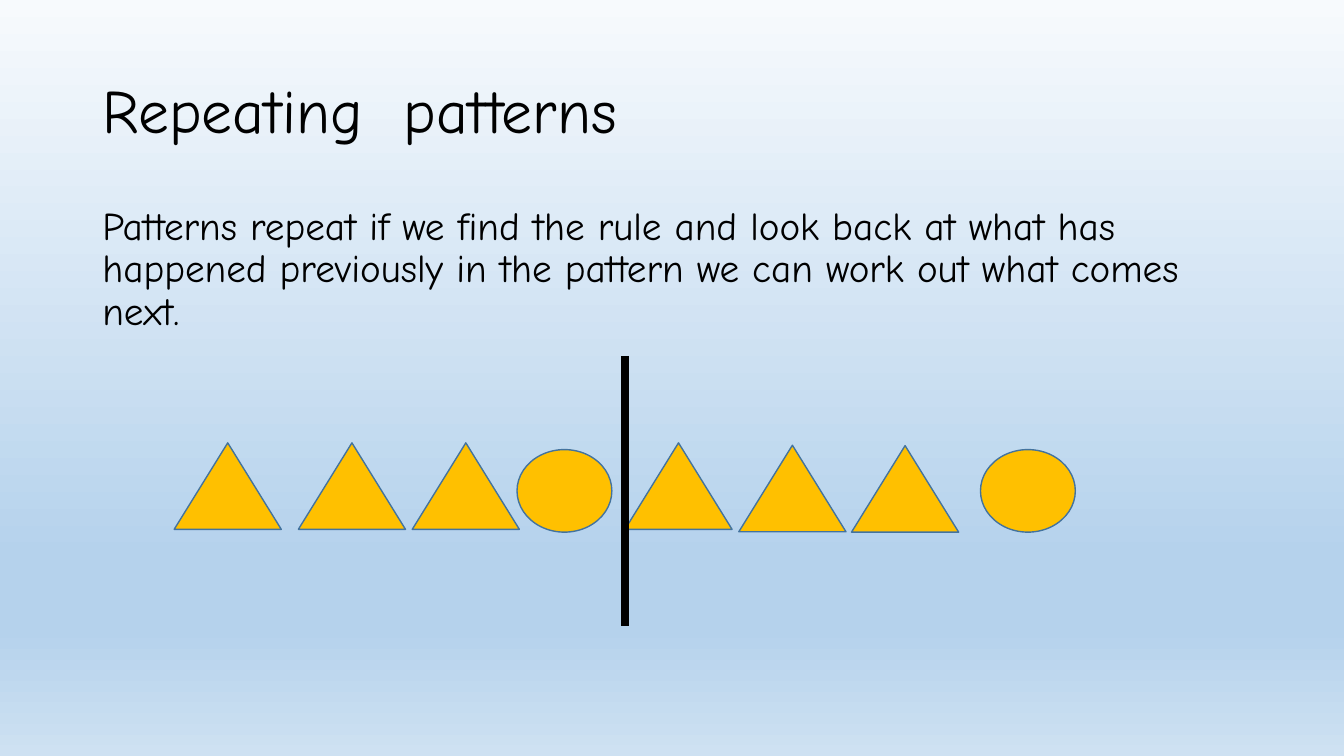
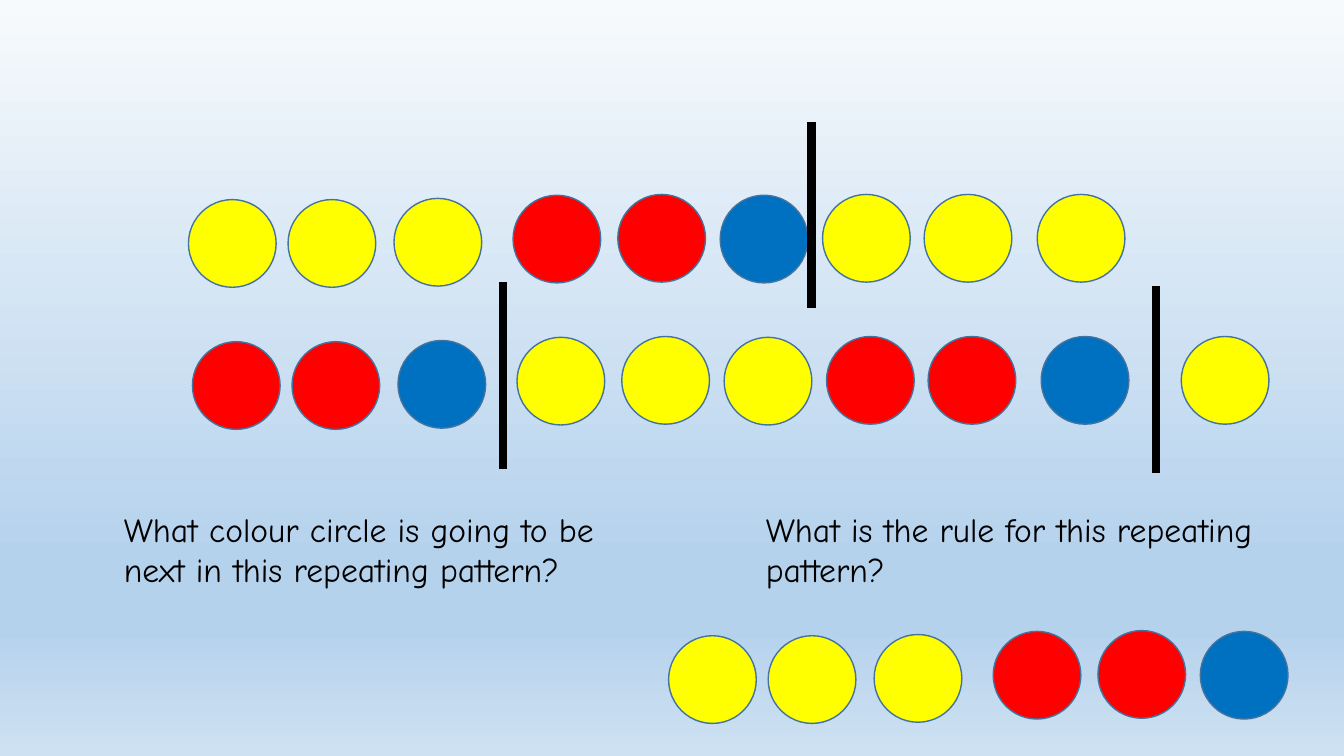
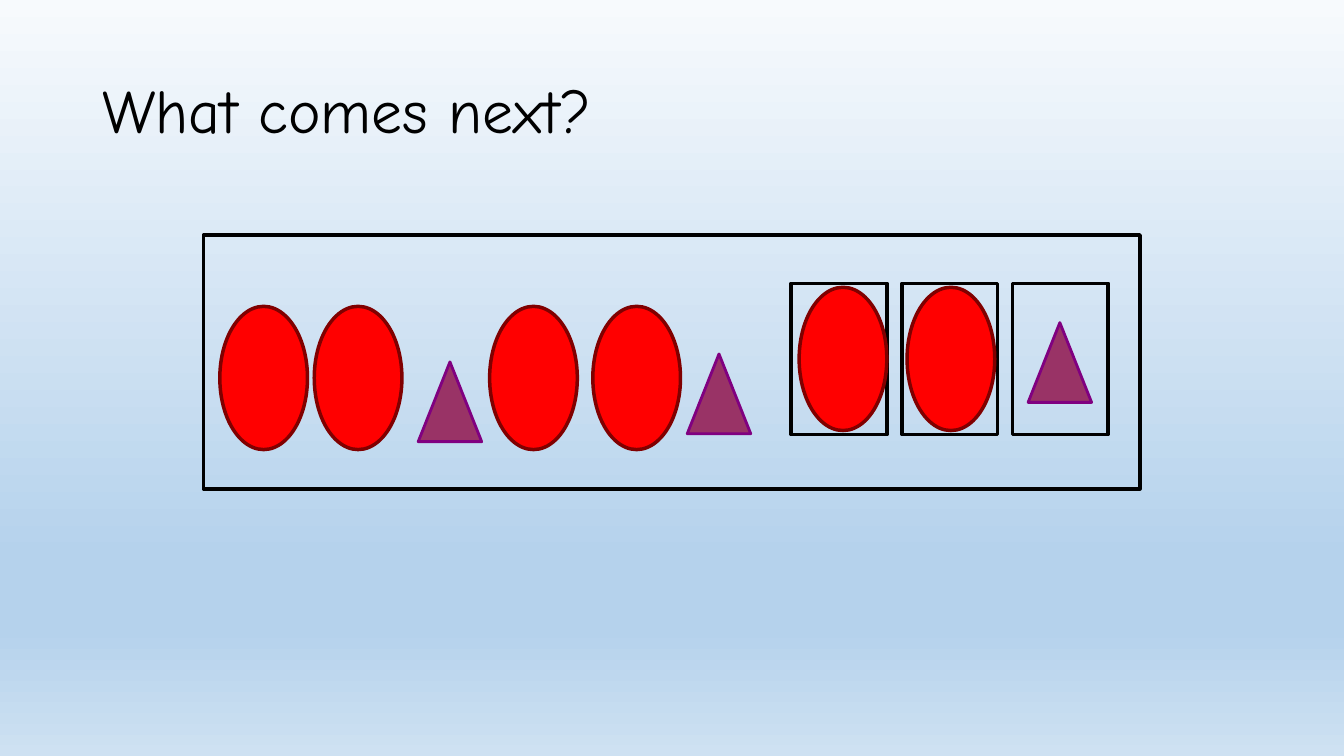
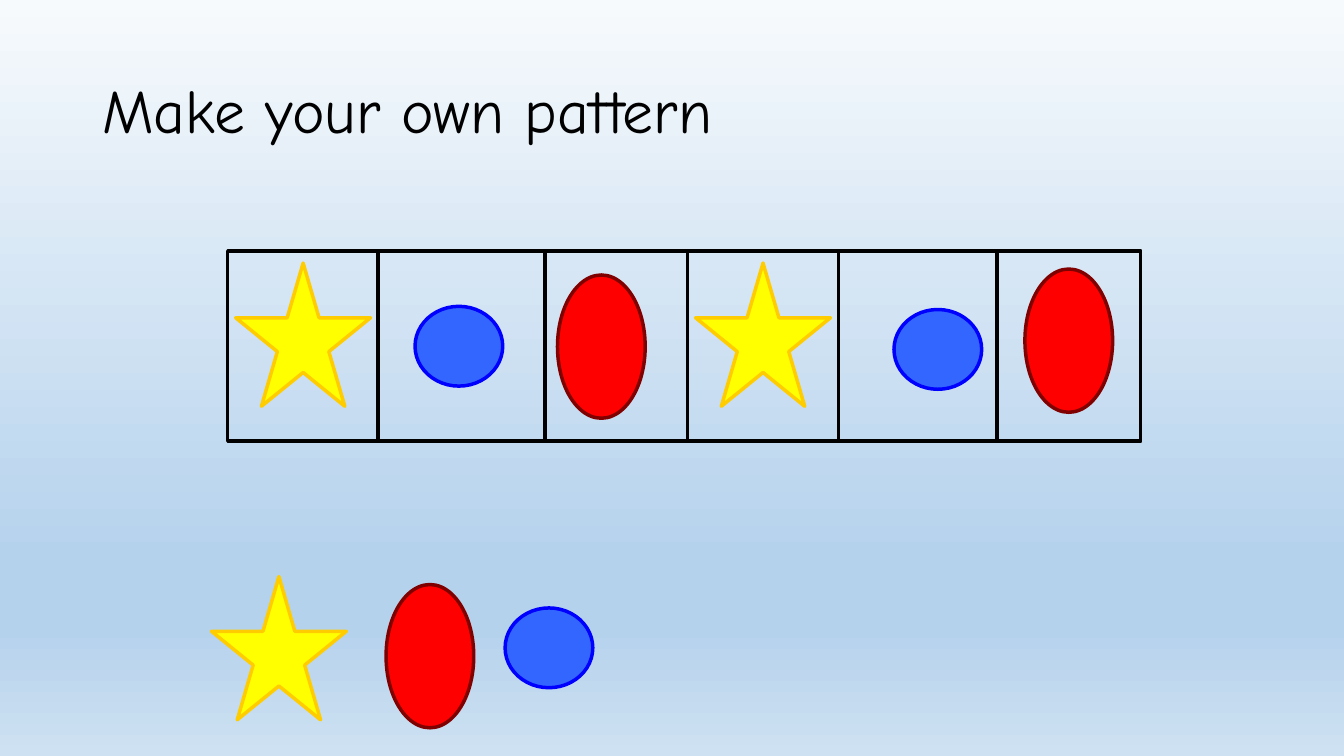
import copy
import pptx
import pptx.dml.color
import pptx.enum.shapes
import pptx.enum.text
import pptx.oxml
import pptx.util

Cm = pptx.util.Cm
Pt = pptx.util.Pt
tint = pptx.dml.color.RGBColor.from_string
Form = pptx.enum.shapes.MSO_SHAPE
Anchor = pptx.enum.text.MSO_ANCHOR

FONT = "Comic Neue"
BLACK = "000000"
EDGE = "43739E"
GOLD = "FFC000"
RED = "FF0000"
WINE = "800000"
SKY = [(0, "F7FAFD"), (0.74, "B5D2EC"), (0.83, "B5D2EC"), (1, "CEE1F2")]
HUES = {"Y": "FFFF00", "R": RED, "B": "0070C0"}
HEAD = dict(size=44, space=0.9, anchor=Anchor.MIDDLE)

deck = pptx.Presentation()
deck.slide_width = Cm(33.87)
deck.slide_height = Cm(19.05)

back = deck.slide_master.background.fill
back.gradient()
back.gradient_angle = 270
stops = deck.slide_master.element.xpath(".//p:bg//a:gsLst")[0]
for step in range(len(SKY) - len(stops)):
    stops.append(copy.deepcopy(stops[0]))
for stop, (place, hue) in zip(back.gradient_stops, SKY):
    stop.position = place
    stop.color.rgb = tint(hue)


def write(slide, text, box, size=24, space=1, before=0, anchor=Anchor.TOP):
    frame = slide.shapes.add_textbox(*map(Cm, box)).text_frame
    frame.word_wrap = True
    frame.vertical_anchor = anchor
    para = frame.paragraphs[0]
    para.line_spacing = space
    para.space_before = Pt(before)
    run = para.add_run()
    run.text = text
    run.font.name = FONT
    run.font.size = Pt(size)
    run.font.color.rgb = tint(BLACK)


def draw(slide, left, top, form=Form.RECTANGLE, wide=1, high=1, fill=None, line=BLACK, thick=2.5):
    shape = slide.shapes.add_shape(form, Cm(left), Cm(top), Cm(wide), Cm(high))
    shape.shadow.inherit = False
    if fill:
        shape.fill.solid()
        shape.fill.fore_color.rgb = tint(fill)
    else:
        shape.fill.background()
    shape.line.color.rgb = tint(line)
    shape.line.width = Pt(thick)


blank = deck.slide_layouts[6]
intro, rows, quiz, make = [deck.slides.add_slide(blank) for page in range(4)]

for slide, title in [
    (intro, "Repeating  patterns"),
    (quiz, "What comes next?"),
    (make, "Make your own pattern"),
]:
    write(slide, title, (2.33, 1.02, 29.21, 3.68), **HEAD)

write(
    intro,
    "Patterns repeat if we find the rule and look back at what has happened previously in the pattern we can work out what comes next.",
    (2.33, 5.08, 29.21, 12.09), size=28, space=0.9, before=10,
)
ball = dict(form=Form.OVAL, wide=2.39, high=2.08, fill=GOLD, line=EDGE, thick=1)
peak = dict(form=Form.ISOSCELES_TRIANGLE, wide=2.7, high=2.18, fill=GOLD, line=EDGE, thick=1)
for left in (13.03, 24.71):
    draw(intro, left, 11.33, **ball)
for left, top in [(4.39, 11.16), (7.52, 11.16), (10.39, 11.16), (15.75, 11.16), (18.62, 11.22), (21.46, 11.23)]:
    draw(intro, left, top, **peak)

spots = [
    (4.75, 5.03), (7.26, 5.03), (9.93, 5), (12.93, 4.92), (15.57, 4.9),
    (18.15, 4.92), (20.73, 4.9), (23.29, 4.9), (26.14, 4.9), (29.67, 4.9),
]
dot = dict(form=Form.OVAL, wide=2.21, high=2.21, line=EDGE, thick=1)
for beads, right, down in [("YYYRRBYYY", 0, 0), ("RRBYYYRRBY", 0.1, 3.58), ("YYYRRB", 12.1, 10.99)]:
    for bead, (left, top) in zip(beads, spots):
        draw(rows, left + right, top + down, fill=HUES[bead], **dot)
write(rows, "What colour circle is going to be next in this repeating pattern?", (2.87, 12.7, 13.21, 3.33))
write(rows, "What is the rule for this repeating pattern?", (19.05, 12.7, 13.06, 2.31))

egg = dict(form=Form.OVAL, wide=2.21, high=3.61, fill=RED, line=WINE)
cone = dict(form=Form.ISOSCELES_TRIANGLE, wide=1.6, high=2.01, fill="993366", line="800080", thick=2)
for box in range(3):
    draw(quiz, 19.94 + 2.79 * box, 7.14, wide=2.41, high=3.81)
for left, top in [(5.54, 7.72), (7.92, 7.72), (12.34, 7.72), (14.94, 7.72), (20.14, 7.24), (22.86, 7.24)]:
    draw(quiz, left, top, **egg)
for left, top in [(10.54, 9.12), (17.32, 8.92), (25.91, 8.13)]:
    draw(quiz, left, top, **cone)
draw(quiz, 5.13, 5.92, wide=23.6, high=6.4)

star = dict(form=Form.STAR_5_POINT, wide=3.4, high=3.61, fill="FFFF00", line="FFCC00")
disc = dict(form=Form.OVAL, wide=2.21, high=2.01, fill="3366FF", line="0000FF")
for style, places in [
    (star, [(5.33, 14.53), (17.53, 6.63), (5.94, 6.63)]),
    (egg, [(9.73, 14.73), (25.83, 6.78), (14.05, 6.93)]),
    (disc, [(12.73, 15.32), (22.53, 7.8), (10.46, 7.72)]),
]:
    for left, top in places:
        draw(make, left, top, **style)
for left, wide in [(5.74, 23.01), (9.53, 15.6), (13.74, 7.39)]:
    draw(make, left, 6.32, wide=wide, high=4.8)

for slide, left, top, high, thick in [
    (intro, 15.75, 8.97, 6.8, 6),
    (rows, 20.45, 3.07, 4.7, 6),
    (rows, 12.67, 7.11, 4.7, 6),
    (rows, 29.13, 7.21, 4.7, 6),
    (make, 17.32, 6.32, 4.8, 2.5),
]:
    bar = slide.shapes.add_connector(
        pptx.enum.shapes.MSO_CONNECTOR.STRAIGHT, Cm(left), Cm(top), Cm(left), Cm(top + high)
    )
    bar.line.color.rgb = tint(BLACK)
    bar.line.width = Pt(thick)
    bar.element.spPr.append(pptx.oxml.xmlchemy.OxmlElement("a:effectLst"))

deck.save("out.pptx")
